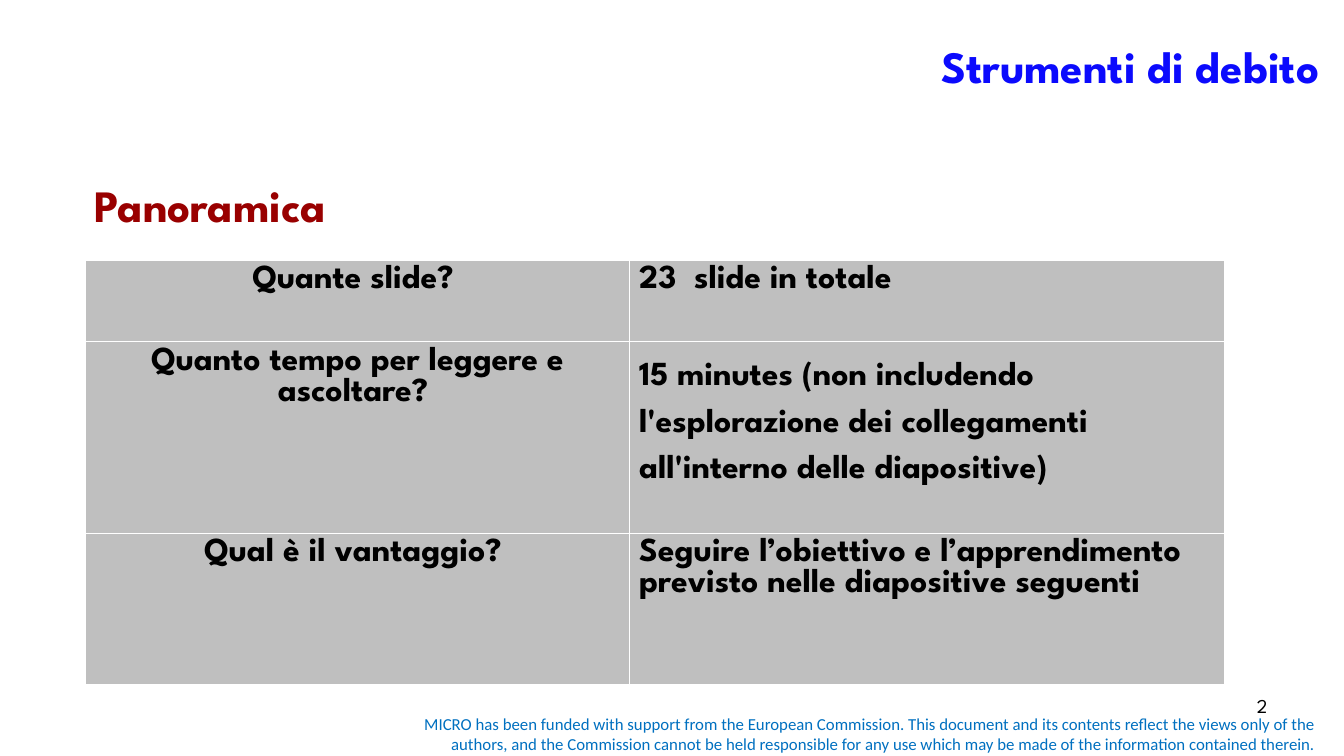
import pptx
import pptx.dml.color
import pptx.enum.text
import pptx.util
from dataclasses import dataclass

ALIGN = pptx.enum.text.PP_ALIGN
ANCHOR = pptx.enum.text.MSO_ANCHOR
EMU_PER_PX = 9144


def px(length):
    return pptx.util.Emu(length * EMU_PER_PX)


@dataclass(frozen=True)
class Theme:
    display: str = "League Spartan"
    body: str = "Calibri"
    blue: str = "0B0AFD"
    red: str = "990000"
    link_blue: str = "0070C0"
    black: str = "000000"
    grey: str = "BFBFBF"
    heading_size: int = 32
    cell_size: int = 24
    number_size: int = 14
    notice_size: int = 12


class SlideBuilder:
    def __init__(self, presentation, theme):
        self.theme = theme
        self.slide = presentation.slides.add_slide(presentation.slide_layouts[5])

    def style(self, paragraph, size, color, align, bold=True, face=None):
        paragraph.alignment = align
        font = paragraph.font
        font.name = face or self.theme.display
        font.size = pptx.util.Pt(size)
        font.bold = bold
        font.color.rgb = pptx.dml.color.RGBColor.from_string(color)

    def title(self, text, left, top, width, height, bottom_inset):
        heading = self.slide.shapes.title
        heading.left, heading.top = px(left), px(top)
        heading.width, heading.height = px(width), px(height)
        frame = heading.text_frame
        frame.text = text
        frame.auto_size = pptx.enum.text.MSO_AUTO_SIZE.NONE
        frame.vertical_anchor = ANCHOR.MIDDLE
        frame.margin_bottom = px(bottom_inset)
        self.style(frame.paragraphs[0], self.theme.heading_size, self.theme.blue, ALIGN.RIGHT)

    def text(self, text, left, top, width, height, size, color,
             align=ALIGN.LEFT, anchor=ANCHOR.TOP, bold=False, face=None):
        box = self.slide.shapes.add_textbox(px(left), px(top), px(width), px(height))
        frame = box.text_frame
        frame.word_wrap = True
        frame.vertical_anchor = anchor
        frame.text = text
        self.style(frame.paragraphs[0], size, color, align, bold, face)

    def table(self, rows, left, top, widths, heights):
        """Draw question and answer rows; each row ends with the answer's line spacing."""
        grid = self.slide.shapes.add_table(
            len(rows), len(widths), px(left), px(top),
            px(sum(widths)), px(sum(heights))).table
        grid.first_row = grid.horz_banding = False
        for column, width in zip(grid.columns, widths):
            column.width = px(width)
        for row, height, (question, answer, spacing) in zip(grid.rows, heights, rows):
            row.height = px(height)
            question_cell, answer_cell = row.cells
            self.cell(question_cell, question, ALIGN.CENTER)
            self.cell(answer_cell, answer, ALIGN.LEFT, spacing)

    def cell(self, cell, text, align, spacing=None):
        cell.fill.solid()
        cell.fill.fore_color.rgb = pptx.dml.color.RGBColor.from_string(self.theme.grey)
        cell.text = text
        paragraph = cell.text_frame.paragraphs[0]
        paragraph.line_spacing = spacing
        self.style(paragraph, self.theme.cell_size, self.theme.black, align)


OVERVIEW = [
    ("Quante slide? ", "23  slide in totale", None),
    ("Quanto tempo per leggere e ascoltare? ",
     "15 minutes (non includendo l'esplorazione dei collegamenti "
     "all'interno delle diapositive)", 1.5),
    ("Qual è il vantaggio? ",
     "Seguire l’obiettivo e l’apprendimento previsto nelle diapositive seguenti", None),
]
FUNDING_NOTICE = (
    "MICRO has been funded with support from the European Commission. "
    "This document and its contents reflect the views only of the authors, "
    "and the Commission cannot be held responsible for any use which may be "
    "made of the information contained therein."
)


def main():
    presentation = pptx.Presentation()
    presentation.slide_width, presentation.slide_height = px(1333), px(750)
    theme = Theme()
    builder = SlideBuilder(presentation, theme)
    builder.text(FUNDING_NOTICE, 375, 703, 940, 50, theme.notice_size, theme.link_blue,
                 ALIGN.RIGHT, ANCHOR.MIDDLE, face=theme.body)
    builder.title("Strumenti di debito", 114, 16, 1205, 140, bottom_inset=46)
    builder.table(OVERVIEW, 85, 258, widths=(539, 591), heights=(81, 148, 150))
    builder.text("2", 956, 683, 311, 52, theme.number_size, theme.black, ALIGN.RIGHT)
    builder.text("Panoramica", 84, 171, 290, 64, theme.heading_size, theme.red, bold=True)
    presentation.save("out.pptx")


if __name__ == "__main__":
    main()
